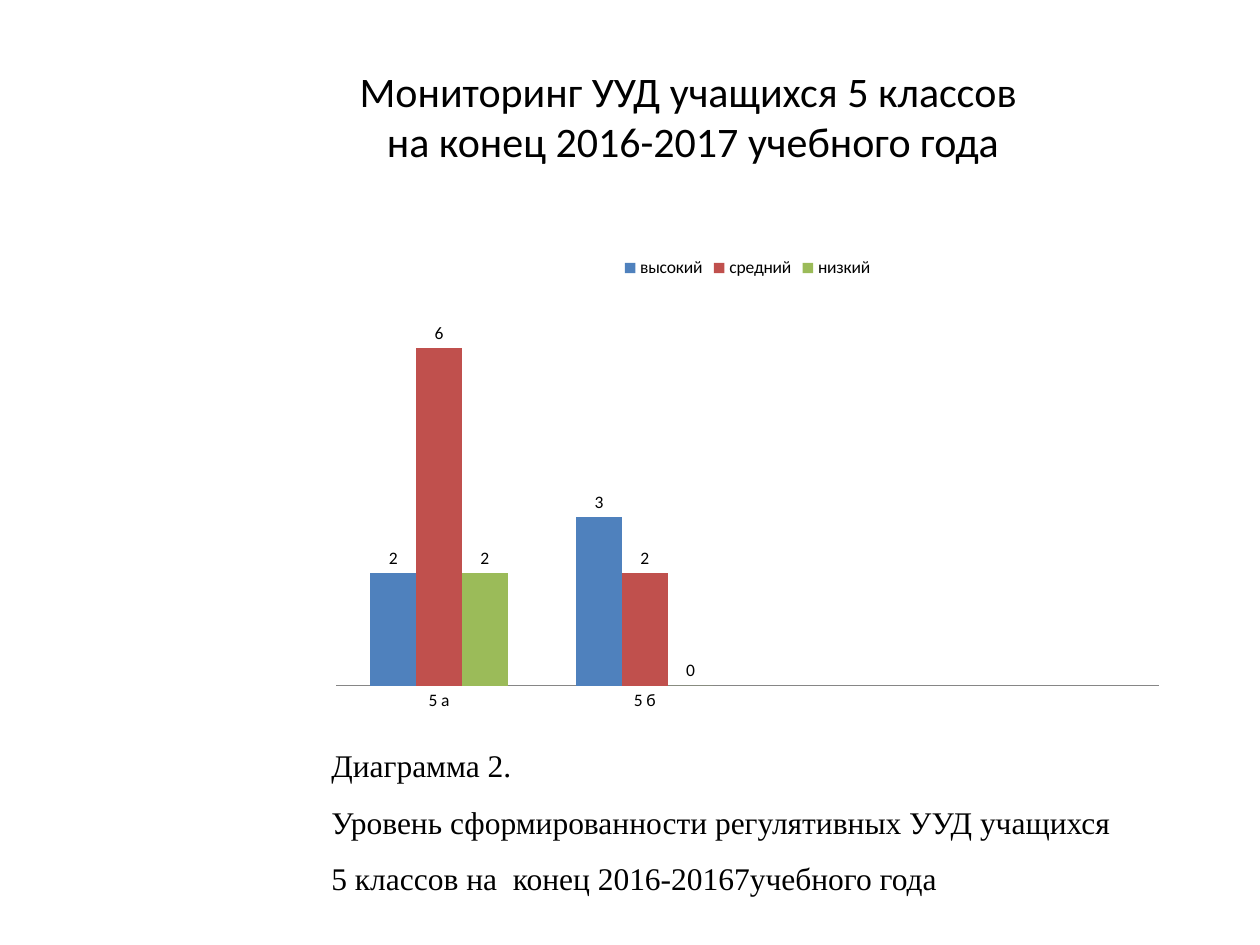
from dataclasses import dataclass

from pptx import Presentation
from pptx.chart.data import CategoryChartData
from pptx.dml.color import RGBColor
from pptx.enum.chart import XL_CHART_TYPE, XL_LABEL_POSITION, XL_LEGEND_POSITION, XL_TICK_MARK
from pptx.enum.text import MSO_ANCHOR, MSO_AUTO_SIZE, PP_ALIGN
from pptx.util import Emu, Pt

COLUMNS = XL_CHART_TYPE.COLUMN_CLUSTERED
OUTSIDE_END = XL_LABEL_POSITION.OUTSIDE_END
LEGEND_TOP = XL_LEGEND_POSITION.TOP
NO_TICK = XL_TICK_MARK.NONE
CENTER, LEFT = PP_ALIGN.CENTER, PP_ALIGN.LEFT
MIDDLE, TOP = MSO_ANCHOR.MIDDLE, MSO_ANCHOR.TOP
FIT_SHAPE = MSO_AUTO_SIZE.SHAPE_TO_FIT_TEXT
PX_PER_INCH = 126


@dataclass(frozen=True)
class Theme:
    text: str = "000000"
    axis: str = "868686"
    background: str = "FFFFFF"
    sans: str = "Calibri"
    serif: str = "Times New Roman"
    title_size: int = 24
    caption_size: int = 18
    chart_size: int = 10


@dataclass(frozen=True)
class Box:
    left: int
    top: int
    width: int
    height: int

    def emu(self) -> tuple:
        return tuple(px(v) for v in (self.left, self.top, self.width, self.height))


@dataclass(frozen=True)
class Level:
    name: str
    values: tuple
    color: str


THEME = Theme()
TITLE_BOX = Box(126, 37, 1134, 157)
CHART_BOX = Box(319, 244, 857, 476)
CAPTION_BOX = Box(319, 721, 906, 184)
TITLE = "Мониторинг УУД учащихся 5 классов \vна конец 2016-2017 учебного года"
CAPTION = (
    "Диаграмма 2.",
    "Уровень сформированности регулятивных УУД учащихся",
    "5 классов на  конец 2016-20167учебного года",
)
CLASSES = ("5 а", "5 б", "", "")
LEVELS = (
    Level("высокий", (2, 3, None, None), "4F81BD"),
    Level("средний", (6, 2, None, None), "C0504D"),
    Level("низкий", (2, 0, None, None), "9BBB59"),
)


def px(n: int) -> Emu:
    return Emu(round(n * 914400 / PX_PER_INCH))


def rgb(color: str) -> RGBColor:
    return RGBColor.from_string(color)


def set_font(font, name: str, size: int) -> None:
    font.name, font.size = name, Pt(size)
    font.color.rgb = rgb(THEME.text)


def write(tf, lines: tuple, *, font: str, size: int, align=LEFT, anchor=TOP,
          spacing: float = 1.0) -> None:
    tf.word_wrap = True
    tf.vertical_anchor = anchor
    for i, line in enumerate(lines):
        p = tf.paragraphs[0] if i == 0 else tf.add_paragraph()
        p.text = line
        p.alignment = align
        p.line_spacing = spacing
        for r in p.runs:
            set_font(r.font, font, size)


def add_level_chart(s, box: Box, classes: tuple, levels: tuple) -> None:
    data = CategoryChartData()
    data.categories = classes
    for level in levels:
        data.add_series(level.name, level.values)
    chart = s.shapes.add_chart(COLUMNS, *box.emu(), data).chart
    set_font(chart.font, THEME.sans, THEME.chart_size)
    chart.has_title = False
    chart.has_legend = True
    chart.legend.position = LEGEND_TOP
    chart.legend.include_in_layout = False

    axis = chart.category_axis
    axis.major_tick_mark = axis.minor_tick_mark = NO_TICK
    axis.format.line.color.rgb = rgb(THEME.axis)
    values = chart.value_axis
    values.visible = False
    values.has_major_gridlines = False
    values.minimum_scale, values.maximum_scale = 0, 7

    plot = chart.plots[0]
    plot.gap_width, plot.overlap = 150, 0
    plot.vary_by_categories = False
    for series, level in zip(plot.series, levels):
        series.format.fill.solid()
        series.format.fill.fore_color.rgb = rgb(level.color)
        series.data_labels.show_value = True
        series.data_labels.position = OUTSIDE_END


def main() -> None:
    prs = Presentation()
    prs.slide_width, prs.slide_height = px(1260), px(945)
    s = prs.slides.add_slide(prs.slide_layouts[5])
    s.background.fill.solid()
    s.background.fill.fore_color.rgb = rgb(THEME.background)

    title = s.shapes.title
    title.left, title.top, title.width, title.height = TITLE_BOX.emu()
    write(title.text_frame, (TITLE,), font=THEME.sans, size=THEME.title_size,
          align=CENTER, anchor=MIDDLE)

    tf = s.shapes.add_textbox(*CAPTION_BOX.emu()).text_frame
    write(tf, CAPTION, font=THEME.serif, size=THEME.caption_size, spacing=1.5)
    tf.auto_size = FIT_SHAPE

    add_level_chart(s, CHART_BOX, CLASSES, LEVELS)
    prs.save("out.pptx")


if __name__ == "__main__":
    main()
